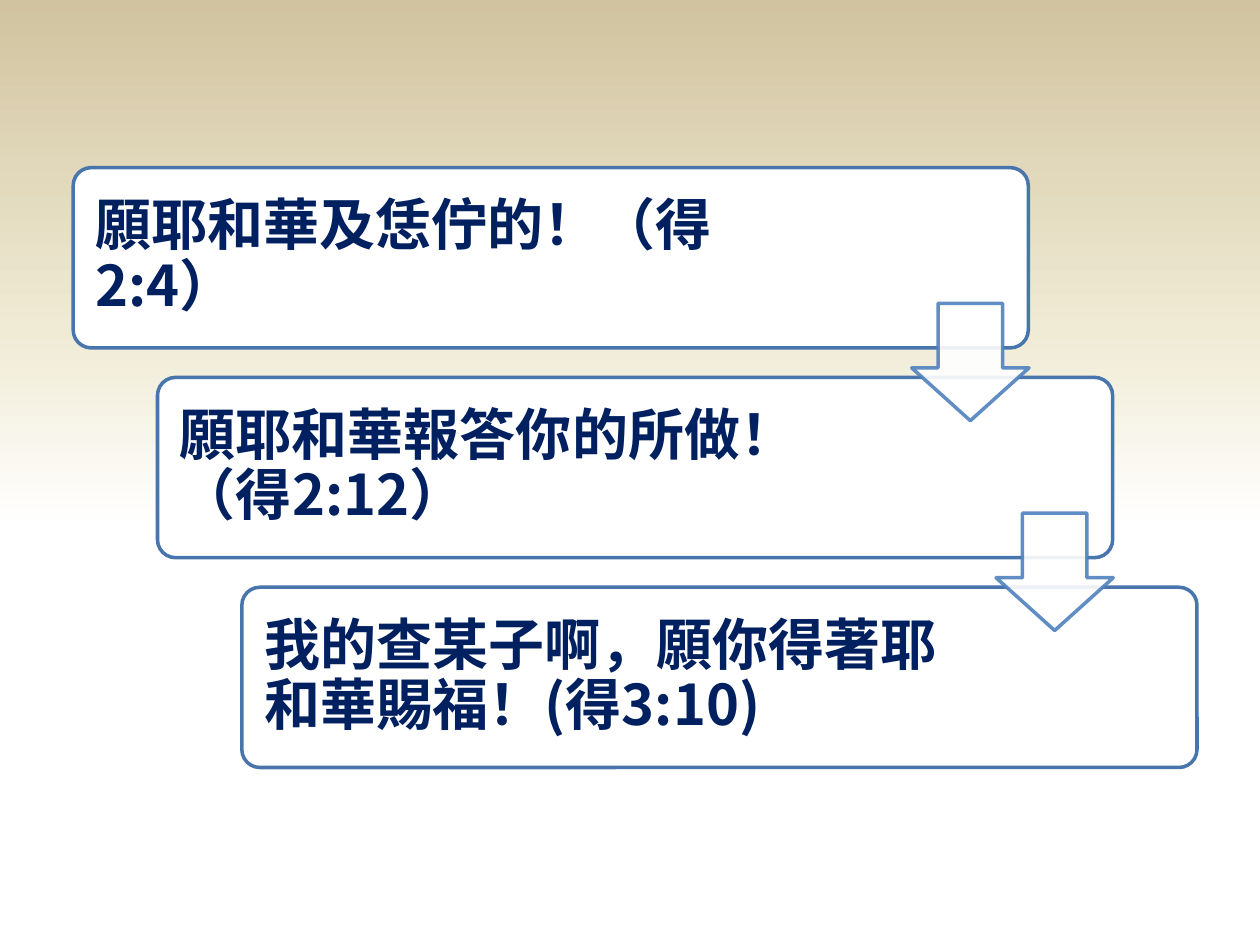
from copy import deepcopy

from lxml.etree import SubElement
from pptx import Presentation
from pptx.dml.color import RGBColor
from pptx.enum.shapes import MSO_SHAPE
from pptx.enum.text import MSO_ANCHOR
from pptx.oxml.ns import qn
from pptx.util import Pt

WHITE = RGBColor(0xFF, 0xFF, 0xFF)
CREAM = RGBColor(0xF0, 0xEB, 0xD5)
SAND = RGBColor(0xD1, 0xC3, 0x9F)
NAVY = RGBColor(0x00, 0x20, 0x60)
BOX_BLUE = RGBColor(0x48, 0x75, 0xAC)
ARROW_BLUE = RGBColor(0x4F, 0x81, 0xBD)
FONT = "Noto Sans CJK SC"

LEFT, TOP = 41.8, 95.8
STEP_X, STEP_Y = 48.2, 119.9
BOX_WIDTH, BOX_HEIGHT = 545.8, 103
ARROW_SIZE = 67

BLESSINGS = [
    ("願耶和華及恁佇的！（得2:4）", 434.9),
    ("願耶和華報答你的所做！（得2:12）", 424.8),
    ("我的查某子啊，願你得著耶和華賜福！(得3:10)", 424.8),
]


def add_outlined(page, kind, left, top, width, height, color, adjustments):
    shape = page.shapes.add_shape(kind, Pt(left), Pt(top), Pt(width), Pt(height))
    shape.shadow.inherit = False
    for index, value in enumerate(adjustments):
        shape.adjustments[index] = value
    shape.fill.solid()
    shape.fill.fore_color.rgb = WHITE
    shape.line.color.rgb = color
    shape.line.width = Pt(2)
    return shape


deck = Presentation()
deck.slide_width, deck.slide_height = Pt(720), Pt(540)
page = deck.slides.add_slide(deck.slide_layouts[6])

backdrop = page.background.fill
backdrop.gradient()
backdrop.gradient_angle = 90
stop_list = page.background._cSld.find(".//" + qn("a:gsLst"))
stop_list.append(deepcopy(stop_list[-1]))
stops = [(0.44, WHITE), (0.65, CREAM), (1, SAND)]
for stop, (position, color) in zip(backdrop.gradient_stops, stops):
    stop.position = position
    stop.color.rgb = color

for row, (blessing, text_width) in enumerate(BLESSINGS):
    left, top = LEFT + row * STEP_X, TOP + row * STEP_Y
    add_outlined(page, MSO_SHAPE.ROUNDED_RECTANGLE, left, top,
                 BOX_WIDTH, BOX_HEIGHT, BOX_BLUE, [0.1])

    box = page.shapes.add_textbox(Pt(left + 3.2), Pt(top + 3.2), Pt(text_width), Pt(96.5))
    frame = box.text_frame
    frame.word_wrap = True
    frame.vertical_anchor = MSO_ANCHOR.MIDDLE
    frame.margin_left = frame.margin_right = Pt(9.6)
    frame.margin_top = frame.margin_bottom = Pt(9.6)
    para = frame.paragraphs[0]
    para.text = blessing
    para.line_spacing = 0.9
    para.font.name = FONT
    para.font.size = Pt(32)
    para.font.bold = True
    para.font.color.rgb = NAVY
    defaults = para._p.pPr.find(qn("a:defRPr"))
    SubElement(defaults, qn("a:ea")).set("typeface", FONT)

for row in range(len(BLESSINGS) - 1):
    arrow = add_outlined(page, MSO_SHAPE.DOWN_ARROW, 521 + row * STEP_X, 173.4 + row * STEP_Y,
                         ARROW_SIZE, ARROW_SIZE, ARROW_BLUE, [0.45, 0.55])
    for color in arrow._element.spPr.iter(qn("a:srgbClr")):
        SubElement(color, qn("a:alpha")).set("val", "90000")
    arrow.adjustments[0], arrow.adjustments[1] = 0.55, 0.45

deck.save("out.pptx")
